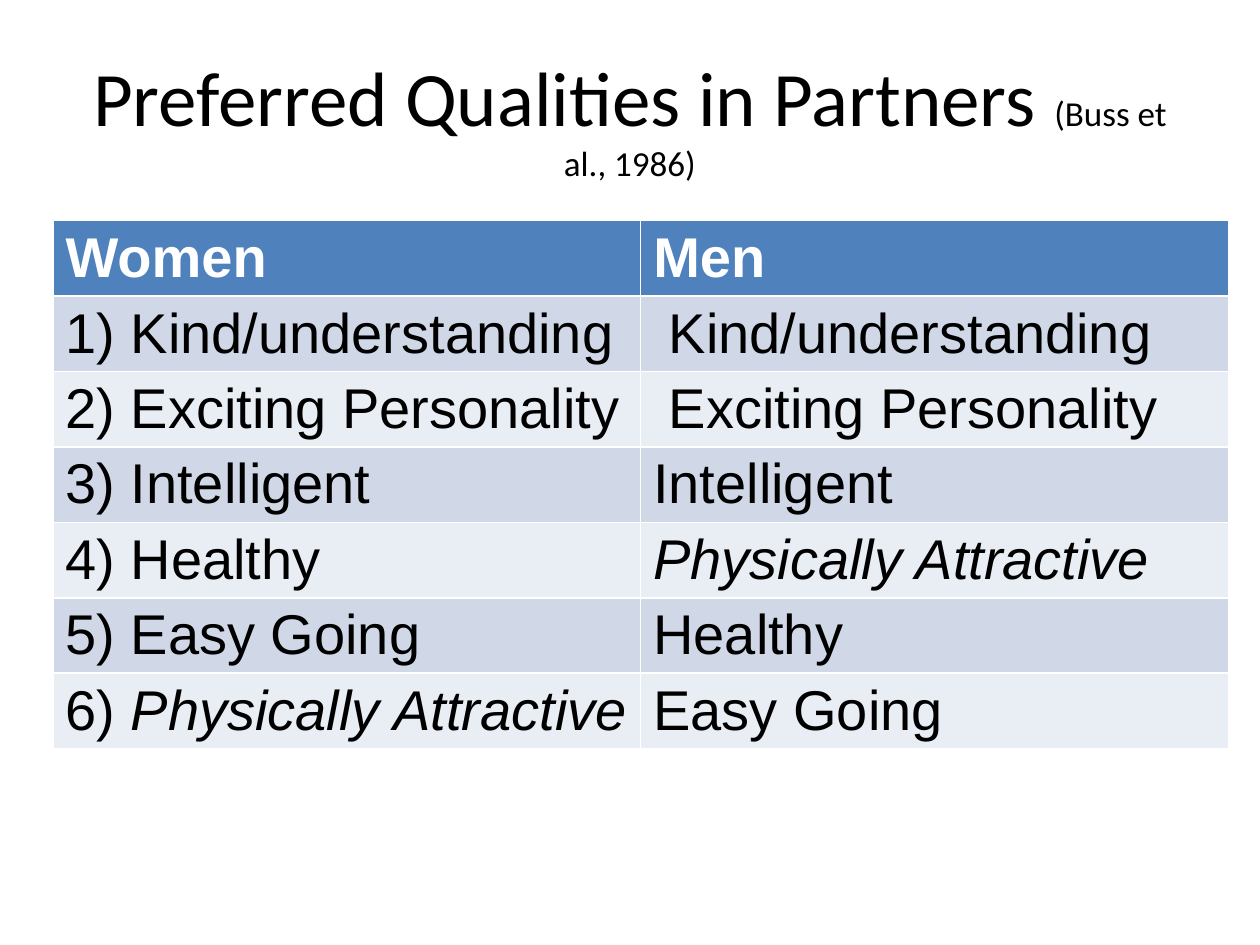
from pptx import Presentation
from pptx.dml.color import RGBColor
from pptx.enum.text import MSO_ANCHOR, PP_ALIGN
from pptx.util import Inches, Pt

MIDDLE = MSO_ANCHOR.MIDDLE
CENTER = PP_ALIGN.CENTER
TITLE_ONLY = 5

HEADER_FILL = "4F81BD"
BAND_FILLS = ["E9EDF4", "D0D8E8"]
EMPHASIZED = "Physically Attractive"

QUALITIES = [
    ("Women", "Men"),
    ("1) Kind/understanding", " Kind/understanding"),
    ("2) Exciting Personality", " Exciting Personality"),
    ("3) Intelligent", "Intelligent"),
    ("4) Healthy", "Physically Attractive"),
    ("5) Easy Going", "Healthy"),
    ("6) Physically Attractive", "Easy Going"),
]


def color(hex_value):
    return RGBColor.from_string(hex_value)


def style_font(font, name, size, hex_value):
    font.name = name
    font.size = Pt(size)
    font.color.rgb = color(hex_value)


prs = Presentation()
prs.slide_width, prs.slide_height = Inches(10), Inches(7.5)
slide = prs.slides.add_slide(prs.slide_layouts[TITLE_ONLY])

# Title with a smaller citation
title = slide.shapes.title
title.left, title.top = Inches(0.5), Inches(0.3)
title.width, title.height = Inches(9), Inches(1.25)
title.text_frame.vertical_anchor = MIDDLE
heading = title.text_frame.paragraphs[0]
heading.alignment = CENTER
for wording, size in [("Preferred Qualities in Partners ", 44), ("(Buss et al., 1986)", 20)]:
    run = heading.add_run()
    run.text = wording
    style_font(run.font, "Calibri", size, "000000")

# Ranking table: the default table style supplies the white borders
row_height = Inches(0.59)
ranking = slide.shapes.add_table(
    len(QUALITIES), 2, Inches(0.42), Inches(1.75), Inches(9.33), row_height * len(QUALITIES)
).table

for row, qualities in enumerate(QUALITIES):
    is_header = row == 0
    for column, quality in enumerate(qualities):
        cell = ranking.cell(row, column)
        cell.fill.solid()
        cell.fill.fore_color.rgb = color(HEADER_FILL if is_header else BAND_FILLS[row % 2])

        entry = cell.text_frame.paragraphs[0]
        style_font(entry.font, "Arial", 32, "FFFFFF" if is_header else "000000")
        entry.font.bold = is_header

        # The emphasized quality is italic, its rank number is not
        rank, emphasized, _ = quality.partition(EMPHASIZED)
        for part in filter(None, (rank, emphasized)):
            run = entry.add_run()
            run.text = part
            style_font(run.font, "Arial", 32, "FFFFFF" if is_header else "000000")
            run.font.bold = is_header
            run.font.italic = part == EMPHASIZED

prs.save("out.pptx")
